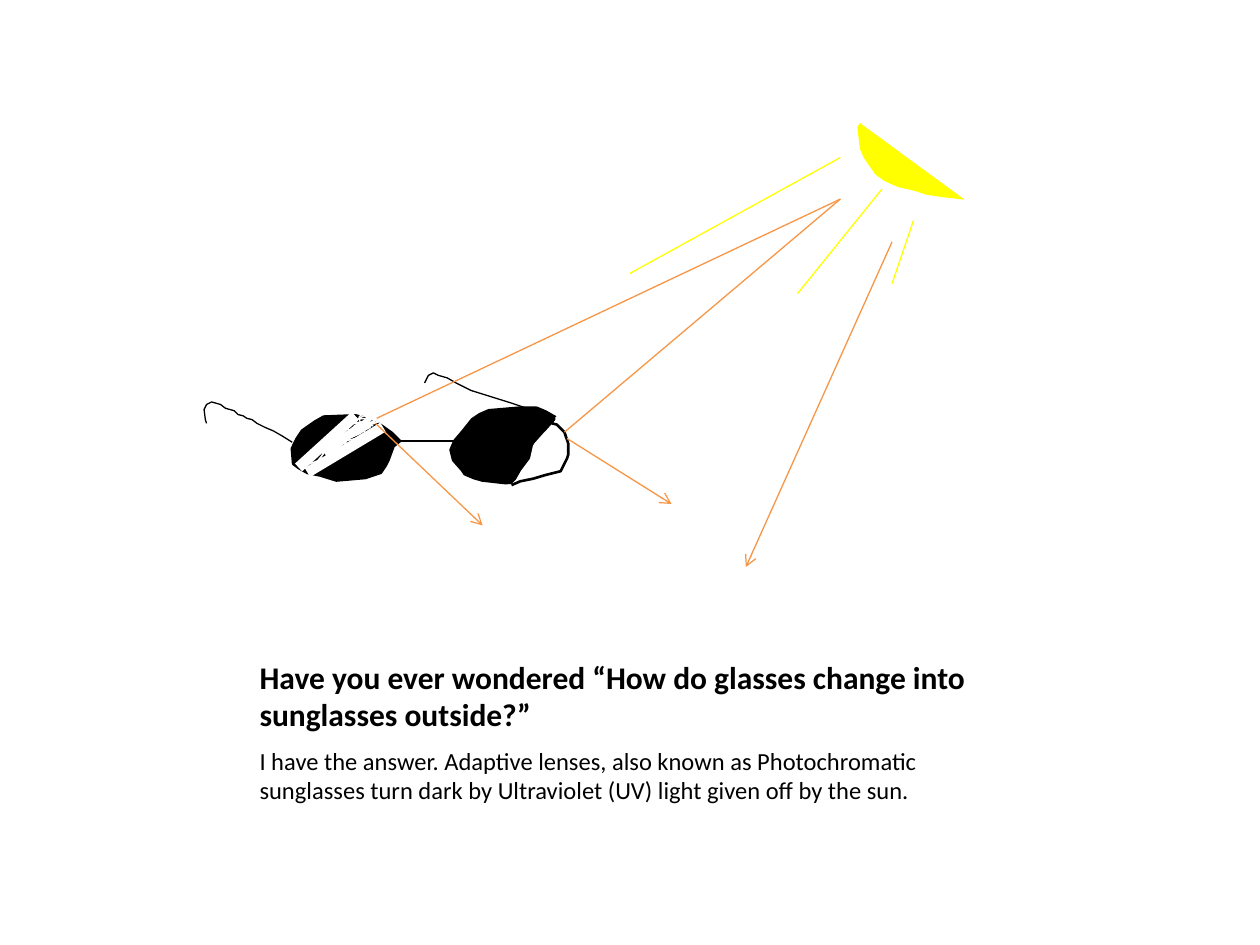
from lxml import etree
from pptx import Presentation
from pptx.dml.color import RGBColor
from pptx.enum.shapes import MSO_CONNECTOR
from pptx.enum.text import MSO_ANCHOR
from pptx.oxml.ns import qn
from pptx.util import Pt

STRAIGHT = MSO_CONNECTOR.STRAIGHT
BOTTOM = MSO_ANCHOR.BOTTOM
BLACK = RGBColor(0x00, 0x00, 0x00)
WHITE = RGBColor(0xFF, 0xFF, 0xFF)
YELLOW = RGBColor(0xFF, 0xFF, 0x00)
ORANGE = RGBColor(0xF7, 0x96, 0x46)
FONT = "Calibri"
GRID = 0.72  # points per unit of the drawing grid

# Outlines, in grid units from the corner of their region
SUN = [(183, 98), (181, 101), (183, 118), (186, 125), (193, 135), (195, 138),
       (202, 143), (206, 145), (213, 148), (226, 151), (235, 154), (248, 156),
       (257, 157), (265, 158)]
RIGHT_LENS = [(311, 124), (288, 126), (281, 129), (275, 133), (267, 143),
              (261, 150), (258, 157), (260, 165), (267, 173), (269, 176),
              (276, 179), (283, 181), (301, 183), (320, 182), (331, 177),
              (338, 169), (342, 162), (345, 155), (347, 148), (345, 140),
              (340, 131), (333, 127), (326, 124)]
LEFT_LENS = [(217, 150), (211, 144), (204, 139), (198, 135), (190, 132),
             (182, 130), (157, 131), (150, 135), (140, 142), (136, 148),
             (132, 156), (133, 168), (137, 171), (144, 175), (154, 177),
             (167, 181), (190, 179), (202, 175), (206, 169), (208, 165),
             (212, 154)]
RIGHT_ARM = [(337, 130), (315, 123), (306, 120), (274, 110), (262, 104),
             (255, 100), (248, 98), (244, 96), (240, 98), (237, 104)]
LEFT_ARM = [(132, 151), (124, 146), (117, 142), (110, 139), (104, 136),
            (100, 133), (96, 132), (93, 130), (89, 129), (86, 126),
            (79, 124), (75, 121), (68, 119), (64, 121), (62, 125),
            (63, 133), (64, 136)]
RIGHT_GLARE = [(340, 148), (337, 150), (333, 157), (330, 170), (327, 177),
               (324, 186), (319, 190), (323, 185), (325, 181), (330, 175),
               (332, 167), (331, 168), (330, 175), (329, 179), (330, 174),
               (335, 163), (339, 155), (340, 151), (338, 155), (336, 160),
               (335, 168), (333, 173), (339, 167), (342, 160), (344, 150),
               (349, 143), (350, 148), (348, 164), (345, 174), (340, 182),
               (339, 186), (339, 175), (340, 151), (339, 142), (336, 152),
               (331, 160), (326, 164), (317, 176), (313, 183), (308, 188),
               (310, 189), (318, 183), (321, 176), (325, 164), (327, 155),
               (335, 146), (337, 144), (345, 135), (345, 131)]
RIGHT_RIM = [(306, 185), (313, 182), (323, 180), (333, 177), (345, 174),
             (350, 164), (351, 161), (351, 152), (348, 143), (342, 137),
             (338, 136), (339, 133)]
LEFT_GLARE = [(192, 138), (188, 139), (186, 142), (179, 145), (173, 149),
              (167, 155), (163, 157), (165, 154), (174, 148), (181, 143),
              (186, 139), (188, 137), (176, 144), (169, 150), (165, 152),
              (173, 148), (183, 139), (190, 135), (194, 133), (187, 137),
              (182, 142), (175, 145), (169, 150), (179, 146), (187, 140),
              (176, 146), (167, 156), (163, 160), (160, 161), (158, 157),
              (162, 152), (169, 148), (175, 144), (182, 139)]
GLINTS = [
    [(170, 154), (174, 151), (173, 145), (186, 144), (182, 140), (194, 137),
     (198, 136), (181, 136), (185, 132), (189, 130), (201, 135), (185, 136),
     (192, 132), (201, 131), (181, 133), (186, 139), (180, 145), (173, 149),
     (162, 152), (157, 155), (160, 157), (157, 160), (150, 168)],
    [(173, 154), (175, 150), (182, 148), (189, 144), (190, 140), (186, 138),
     (194, 139), (183, 138), (185, 139), (179, 144), (189, 139), (179, 146),
     (175, 148), (183, 143), (176, 144), (177, 148), (169, 151), (165, 155)],
    [(183, 145), (185, 142), (194, 139), (190, 137), (196, 138), (192, 137),
     (193, 140), (180, 144), (177, 149), (176, 149)],
    [(186, 136), (185, 131), (187, 129), (198, 126), (193, 131), (192, 135),
     (192, 137), (199, 132), (194, 138), (186, 144), (175, 149), (171, 150),
     (162, 156), (157, 158), (154, 165), (146, 168), (144, 165), (151, 163),
     (152, 160), (163, 155), (173, 156), (179, 155), (173, 154), (175, 150),
     (176, 145), (173, 144), (183, 142), (181, 138), (187, 135), (175, 136),
     (177, 143), (170, 154), (165, 155)],
]


def draw_path(slide, box, dots, ink, width, fill=None, close=False):
    pen = slide.shapes.build_freeform(*dots[0], scale=Pt(GRID))
    pen.add_line_segments(dots[1:], close=close)
    shape = pen.convert_to_shape(Pt(box[0]), Pt(box[1]))
    shape.shadow.inherit = False
    if fill is None:
        shape.fill.background()
    else:
        shape.fill.solid()
        shape.fill.fore_color.rgb = fill
    shape.line.color.rgb = ink
    shape.line.width = Pt(width)


def draw_line(slide, box, start, end, ink, width=0.75, arrow=False):
    ends = [Pt(edge + GRID * step)
            for dot in (start, end) for edge, step in zip(box, dot)]
    line = slide.shapes.add_connector(STRAIGHT, *ends)
    line.line.color.rgb = ink
    line.line.width = Pt(width)
    props = line._element.spPr
    if arrow:
        etree.SubElement(props.find(qn("a:ln")), qn("a:tailEnd"), type="arrow")
    etree.SubElement(props, qn("a:effectLst"))


def draw_sun(slide, box):
    draw_path(slide, box, SUN, YELLOW, 0.75, YELLOW)
    for start, end in [((225, 175), (208, 225)), ((167, 125), (0, 217)),
                       ((200, 150), (133, 233))]:
        draw_line(slide, box, start, end, YELLOW)


def draw_glasses(slide, box):
    # Lenses, bridge and arms
    for lens in (RIGHT_LENS, LEFT_LENS):
        draw_path(slide, box, lens, BLACK, 2, BLACK, close=True)
    draw_line(slide, box, (261, 150), (217, 150), BLACK)
    for arm in (RIGHT_ARM, LEFT_ARM):
        draw_path(slide, box, arm, BLACK, 0.75)
    # Glare and rim on the right lens
    for start, end in [((345, 140), (342, 175)), ((340, 142), (333, 156))]:
        draw_line(slide, box, start, end, WHITE, 6)
    draw_path(slide, box, RIGHT_GLARE, WHITE, 6)
    draw_path(slide, box, RIGHT_RIM, BLACK, 1.5)
    # Glare on the left lens
    for start, end in [((182, 130), (137, 171)), ((204, 139), (144, 175))]:
        draw_line(slide, box, start, end, WHITE, 6)
    draw_path(slide, box, LEFT_GLARE, WHITE, 2, WHITE, close=True)
    for glint in GLINTS:
        draw_path(slide, box, glint, WHITE, 0.75)


def draw_rays(slide, box):
    for start, end, arrow in [((467, 58), (248, 243), False),
                              ((250, 248), (333, 300), True),
                              ((467, 58), (99, 232), False),
                              ((98, 236), (183, 317), True),
                              ((508, 92), (392, 350), True)]:
        draw_line(slide, box, start, end, ORANGE, arrow=arrow)


def set_text(holder, box, text, size, bold):
    holder.left, holder.top, holder.width, holder.height = map(Pt, box)
    holder.text_frame.text = text
    font = holder.text_frame.paragraphs[0].runs[0].font
    font.name, font.size, font.bold = FONT, Pt(size), bold
    font.color.rgb = BLACK


def add_caption(slide, box):
    left, top, width, height = box
    split = 44.64  # height of the title
    title, body = slide.shapes.title, slide.placeholders[2]
    set_text(title, (left, top, width, split),
             "Have you ever wondered “How do glasses change into "
             "sunglasses outside?”", 18, True)
    title.text_frame.vertical_anchor = BOTTOM
    set_text(body, (left, top + split, width, height - split),
             "I have the answer. Adaptive lenses, also known as "
             "Photochromatic sunglasses turn dark by Ultraviolet (UV) light "
             "given off by the sun.", 14, False)


def main():
    deck = Presentation()
    deck.slide_width, deck.slide_height = Pt(720), Pt(540)
    slide = deck.slides.add_slide(deck.slide_layouts[8])
    frame = slide.placeholders[1]._element
    frame.getparent().remove(frame)  # unused placeholder
    add_caption(slide, (141.12, 378, 432, 108))
    draw_sun(slide, (360, 0))
    draw_glasses(slide, (72, 144))
    draw_rays(slide, (144, 72))
    deck.save("out.pptx")


if __name__ == "__main__":
    main()
